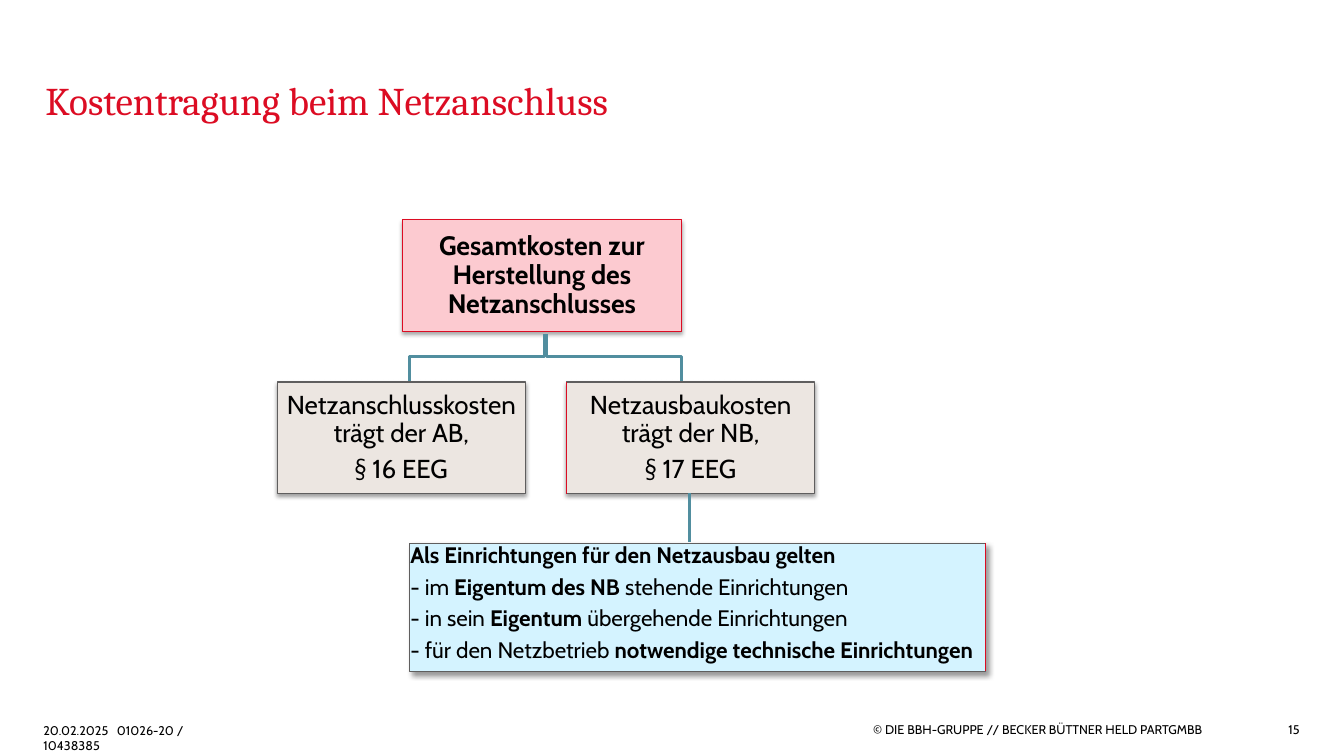
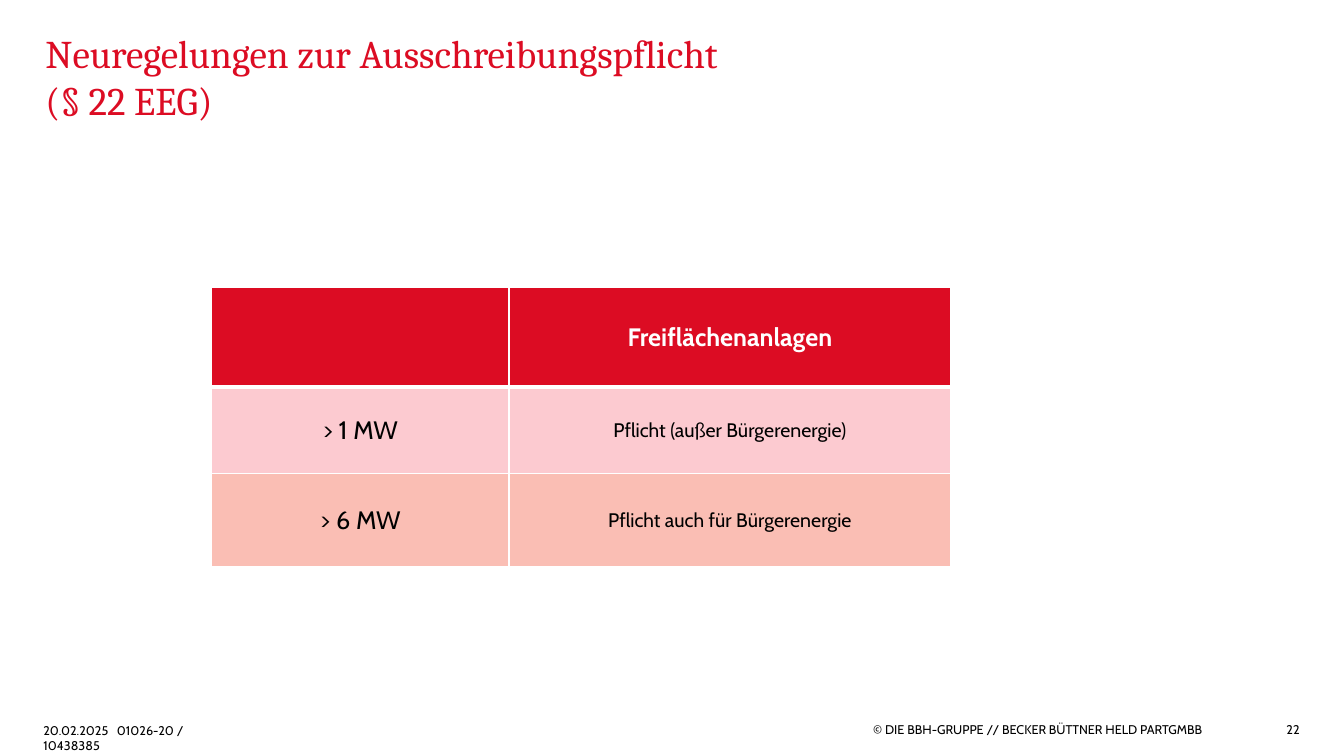
from dataclasses import dataclass
from typing import NamedTuple

from lxml import etree
from pptx import Presentation
from pptx import util as u
from pptx.dml.color import RGBColor
from pptx.enum import shapes, text
from pptx.oxml import ns

RED = RGBColor(0xDC, 0x0C, 0x23)
PINK = RGBColor(0xFC, 0xCA, 0xD0)
SALMON = RGBColor(0xFA, 0xBE, 0xB4)
SAND = RGBColor(0xEC, 0xE6, 0xE1)
SKY = RGBColor(0xD4, 0xF3, 0xFF)
TEAL = RGBColor(0x51, 0x8E, 0x9F)
GREY = RGBColor(0x5F, 0x5E, 0x5E)
BLACK = RGBColor(0, 0, 0)
WHITE = RGBColor(0xFF, 0xFF, 0xFF)

WIDTH, HEIGHT = u.Inches(13.33), u.Inches(7.5)
BODY_FONT, TITLE_FONT = "Cabin", "Cambria"
LEFT, CENTER, RIGHT = text.PP_ALIGN.LEFT, text.PP_ALIGN.CENTER, text.PP_ALIGN.RIGHT
TOP, MIDDLE, BOTTOM = text.MSO_ANCHOR.TOP, text.MSO_ANCHOR.MIDDLE, text.MSO_ANCHOR.BOTTOM


class Box(NamedTuple):
    """Left, top, width and height in percent of the slide."""
    x: float
    y: float
    w: float
    h: float


class Run(NamedTuple):
    text: str
    bold: bool = False


class Shadow(NamedTuple):
    alpha: int
    blur: float
    dist: float
    angle: int


Paragraphs = tuple[tuple[Run, ...], ...]


@dataclass
class Card:
    box: Box
    fill: RGBColor
    line: RGBColor
    size: float
    paragraphs: Paragraphs
    shadow: Shadow = Shadow(38, 3.1, 1.6, 90)
    align: text.PP_ALIGN = CENTER
    anchor: text.MSO_ANCHOR = MIDDLE
    red_edge: float | None = None  # share of the width


@dataclass
class Footer:
    box: Box
    text: str
    align: text.PP_ALIGN = LEFT
    anchor: text.MSO_ANCHOR = MIDDLE


@dataclass
class Row:
    height: float
    fill: RGBColor
    color: RGBColor
    texts: tuple[str, str]
    sizes: tuple[int, int]
    bold: bool = False
    rule: float = 1


TITLE_BOX = Box(3.38, 4.67, 85.37, 11.6)
DATE_TAB = u.Inches(0.73)
FOOTERS = (
    Footer(Box(3.23, 95.6, 12.9, 2), "20.02.2025\t01026-20 / 10438385", anchor=TOP),
    Footer(Box(64.97, 94.4, 25.96, 4.13), "© DIE BBH-GRUPPE // BECKER BÜTTNER HELD PARTGMBB"),
)
NUMBER_BOX = Box(93.17, 94.93, 3.53, 3.2)

CARDS = (
    Card(Box(29.93, 29.07, 20.78, 14.8), PINK, RED, 19,
         ((Run("Gesamtkosten zur Herstellung des Netzanschlusses", True),),),
         Shadow(35, 3.1, 1.8, 90)),
    Card(Box(20.63, 50.53, 18.45, 14.8), SAND, GREY, 18.5,
         ((Run("Netzanschlusskosten trägt der AB,"),), (Run("§ 16 EEG"),))),
    Card(Box(42.16, 50.53, 18.45, 14.8), SAND, GREY, 18.5,
         ((Run("Netzausbaukosten trägt der NB,"),), (Run("§ 17 EEG"),)), red_edge=0),
    Card(Box(30.46, 71.87, 42.84, 16.93), SKY, GREY, 16,
         ((Run("Als Einrichtungen für den Netzausbau gelten", True),),
          (Run("- im "), Run("Eigentum des NB ", True), Run("stehende Einrichtungen")),
          (Run("- in sein "), Run("Eigentum", True), Run(" übergehende Einrichtungen")),
          (Run("- für den Netzbetrieb "), Run("notwendige technische Einrichtungen", True))),
         Shadow(40, 4, 3, 45), LEFT, TOP, red_edge=1),
)
# Start and end column of each branch, and the rows of its bends
BRANCHES = ((40.51, 30.46), (40.66, 50.71))
BRANCH_ROWS = (44.13, 47.2, 50.4)

TABLE_AT = (15.75, 38)
COLUMNS = (22.13, 32.86)
ROWS = (
    Row(13.2, RED, WHITE, ("", "Freiflächenanlagen"), (18, 18), True, 3),
    Row(11.47, PINK, BLACK, ("> 1 MW", "Pflicht (außer Bürgerenergie)"), (18, 14)),
    Row(12.27, SALMON, BLACK, ("> 6 MW", "Pflicht auch für Bürgerenergie"), (18, 14)),
)


def px(share: float) -> int:
    return round(WIDTH * share / 100)


def py(share: float) -> int:
    return round(HEIGHT * share / 100)


def place(box: Box) -> tuple[int, int, int, int]:
    return px(box.x), py(box.y), px(box.w), py(box.h)


def apply(target, values: dict) -> None:
    for name, value in values.items():
        setattr(target, name, value)


def set_font(font, size: float, color: RGBColor, bold: bool = False,
             name: str = BODY_FONT) -> None:
    apply(font, {"name": name, "size": u.Pt(size), "bold": bold})
    font.color.rgb = color


def set_frame(tf, anchor: text.MSO_ANCHOR, margin: float = 0) -> None:
    inset = u.Inches(margin)
    apply(tf, {"word_wrap": True, "auto_size": text.MSO_AUTO_SIZE.NONE,
               "vertical_anchor": anchor, "margin_left": inset, "margin_right": inset,
               "margin_top": inset, "margin_bottom": inset})


def sub(parent, tag: str, **attrs):
    el = etree.SubElement(parent, ns.qn(tag))
    for name, value in attrs.items():
        el.set(name, str(value))
    return el


def add_footer(s, footer: Footer) -> None:
    tf = s.shapes.add_textbox(*place(footer.box)).text_frame
    set_frame(tf, footer.anchor)
    p = tf.paragraphs[0]
    p.alignment = footer.align
    if "\t" in footer.text:
        tabs = sub(p._p.get_or_add_pPr(), "a:tabLst")
        sub(tabs, "a:tab", pos=int(DATE_TAB), algn="l")
    r = p.add_run()
    r.text = footer.text
    set_font(r.font, 9, BLACK)


def new_slide(prs, title: str, number: int):
    """Add a slide with the shared title style and footers."""
    s = prs.slides.add_slide(prs.slide_layouts[5])
    sp = s.shapes.title
    apply(sp, dict(zip(("left", "top", "width", "height"), place(TITLE_BOX))))
    tf = sp.text_frame
    tf.text = title
    set_frame(tf, BOTTOM)
    p = tf.paragraphs[0]
    p.alignment = LEFT
    for r in p.runs:
        set_font(r.font, 28, RED, name=TITLE_FONT)
    for footer in (*FOOTERS, Footer(NUMBER_BOX, str(number), RIGHT)):
        add_footer(s, footer)
    return s


def add_shadow(sp, shadow: Shadow) -> None:
    sp.shadow.inherit = False
    effects = sp._element.spPr.find(ns.qn("a:effectLst"))
    outer = sub(effects, "a:outerShdw", blurRad=int(u.Pt(shadow.blur)),
                dist=int(u.Pt(shadow.dist)), dir=shadow.angle * 60000,
                algn="ctr", rotWithShape=0)
    sub(sub(outer, "a:srgbClr", val=BLACK), "a:alpha", val=shadow.alpha * 1000)


def add_line(s, start: tuple[float, float], end: tuple[float, float],
             color: RGBColor, width: float) -> None:
    line = s.shapes.add_connector(shapes.MSO_CONNECTOR.STRAIGHT, px(start[0]), py(start[1]),
                                  px(end[0]), py(end[1]))
    line.line.color.rgb = color
    line.line.width = u.Pt(width)
    sub(line._element.spPr, "a:effectLst")


def add_card(s, card: Card) -> None:
    sp = s.shapes.add_shape(shapes.MSO_SHAPE.RECTANGLE, *place(card.box))
    sp.fill.solid()
    sp.fill.fore_color.rgb = card.fill
    sp.line.color.rgb = card.line
    sp.line.width = u.Pt(0.75)
    add_shadow(sp, card.shadow)
    tf = sp.text_frame
    set_frame(tf, card.anchor, 0.01)
    for i, runs in enumerate(card.paragraphs):
        p = tf.add_paragraph() if i else tf.paragraphs[0]
        apply(p, {"alignment": card.align, "line_spacing": 0.9,
                  "space_after": u.Pt(card.size * 0.33)})
        for run in runs:
            r = p.add_run()
            r.text = run.text
            set_font(r.font, card.size, BLACK, run.bold)
    if card.red_edge is not None:
        x = card.box.x + card.red_edge * card.box.w
        add_line(s, (x, card.box.y), (x, card.box.y + card.box.h), RED, 0.75)


def add_branch(s, start: float, end: float) -> None:
    top, bend, bottom = BRANCH_ROWS
    builder = s.shapes.build_freeform(px(start), py(top))
    builder.add_line_segments([(px(start), py(bend)), (px(end), py(bend)),
                               (px(end), py(bottom))], close=False)
    sp = builder.convert_to_shape()
    sp.shadow.inherit = False
    sp.fill.background()
    sp.line.color.rgb = TEAL
    sp.line.width = u.Pt(2)


def set_borders(cell, bottom: float, top: float) -> None:
    tc_pr = cell._tc.get_or_add_tcPr()
    for side, width in (("L", 1), ("R", 1), ("T", top), ("B", bottom)):
        ln = sub(tc_pr, f"a:ln{side}", w=int(u.Pt(width)))
        sub(sub(ln, "a:solidFill"), "a:srgbClr", val=WHITE)


def add_duty_table(s) -> None:
    x, y = TABLE_AT
    box = Box(x, y, sum(COLUMNS), sum(row.height for row in ROWS))
    table = s.shapes.add_table(len(ROWS), len(COLUMNS), *place(box)).table
    table.horz_banding = False
    for column, width in zip(table.columns, COLUMNS):
        column.width = px(width)
    rule_above = 1
    for i, row in enumerate(ROWS):
        table.rows[i].height = py(row.height)
        for j, (label, size) in enumerate(zip(row.texts, row.sizes)):
            cell = table.cell(i, j)
            set_borders(cell, row.rule, rule_above)
            cell.fill.solid()
            cell.fill.fore_color.rgb = row.fill
            cell.vertical_anchor = MIDDLE
            p = cell.text_frame.paragraphs[0]
            p.alignment = CENTER
            if label:
                r = p.add_run()
                r.text = label
                set_font(r.font, size, row.color, row.bold)
        rule_above = row.rule


def main() -> None:
    prs = Presentation()
    apply(prs, {"slide_width": WIDTH, "slide_height": HEIGHT})

    s = new_slide(prs, "Kostentragung beim Netzanschluss", 15)
    for card in CARDS:
        add_card(s, card)
    for start, end in BRANCHES:
        add_branch(s, start, end)
    add_line(s, (51.31, 65.2), (51.31, 71.73), TEAL, 2)

    s = new_slide(prs, "Neuregelungen zur Ausschreibungspflicht\v(§ 22 EEG)", 22)
    add_duty_table(s)

    prs.save("out.pptx")


if __name__ == "__main__":
    main()
